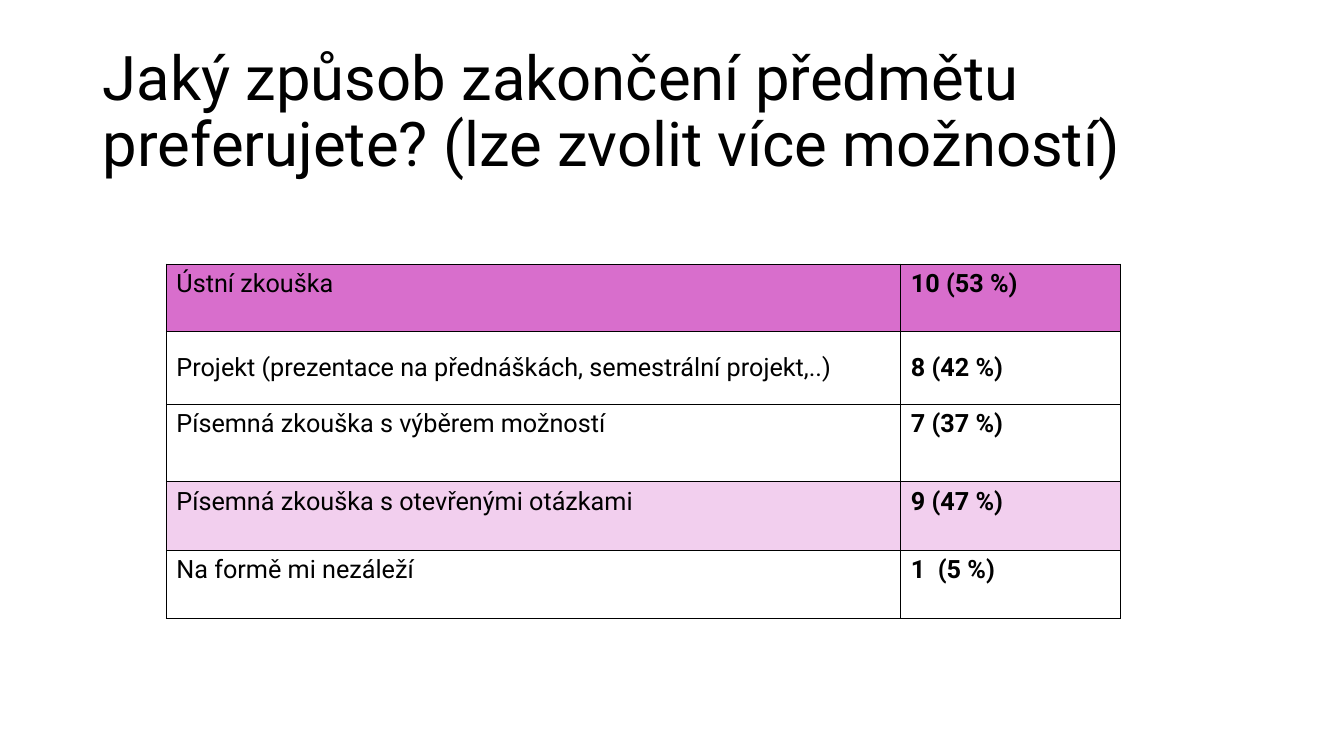
"""Build a survey slide about the preferred way of finishing a course."""
from lxml import etree
from pptx import Presentation
from pptx.dml.color import RGBColor
from pptx.enum.text import MSO_ANCHOR, MSO_AUTO_SIZE, PP_ALIGN
from pptx.oxml.ns import qn
from pptx.util import Inches, Pt

TOP, MIDDLE = MSO_ANCHOR.TOP, MSO_ANCHOR.MIDDLE
LEFT = PP_ALIGN.LEFT
NO_AUTOFIT = MSO_AUTO_SIZE.NONE
TITLE_ONLY = 5

COLORS = {"text": "000000", "border": "000000", "top": "D86ECC",
          "second": "F2CFEE", "plain": "FFFFFF"}
FONT = "Roboto"
TITLE = "Jaký způsob zakončení předmětu preferujete? (lze zvolit více možností)"
TITLE_BOX = [Inches(n) for n in (0.92, 0.4, 11.5, 1.45)]
TABLE_BOX = [Inches(n) for n in (1.65, 2.62, 9.46, 3.53)]
COLUMN_SHARES = (0.77, 0.23)
ANSWERS = [
    ("Ústní zkouška", "10 (53 %)", 0.67, TOP, "top"),
    ("Projekt (prezentace na přednáškách, semestrální projekt,..)",
     "8 (42 %)", 0.72, MIDDLE, "plain"),
    ("Písemná zkouška s výběrem možností", "7 (37 %)", 0.77, TOP, None),
    ("Písemná zkouška s otevřenými otázkami", "9 (47 %)", 0.68, TOP, "second"),
    ("Na formě mi nezáleží", "1  (5 %)", 0.68, TOP, None),
]


def write_text(frame, text, size, bold=False):
    """Write one left-aligned paragraph in the slide's font."""
    paragraph = frame.paragraphs[0]
    paragraph.alignment = LEFT
    run = paragraph.add_run()
    run.text = text
    for name, value in {"name": FONT, "size": Pt(size), "bold": bold}.items():
        setattr(run.font, name, value)
    run.font.color.rgb = RGBColor.from_string(COLORS["text"])
    return paragraph


def add_borders(cell):
    """Draw a thin line on all four sides of a cell."""
    properties = cell._tc.get_or_add_tcPr()
    for side in ("a:lnL", "a:lnR", "a:lnT", "a:lnB"):
        line = etree.SubElement(properties, qn(side), w=str(Pt(1)))
        fill = etree.SubElement(line, qn("a:solidFill"))
        etree.SubElement(fill, qn("a:srgbClr"), val=COLORS["border"])


def fill_cell(cell, text, anchor, color, bold):
    """Format one table cell and write its text."""
    add_borders(cell)
    if color:
        cell.fill.solid()
        cell.fill.fore_color.rgb = RGBColor.from_string(COLORS[color])
    else:
        cell.fill.background()
    cell.vertical_anchor = anchor
    write_text(cell.text_frame, text, 18, bold)


def place_title(slide, box):
    """Place the question in the title placeholder."""
    question = slide.shapes.title
    for name, value in zip(("left", "top", "width", "height"), box):
        setattr(question, name, value)
    frame = question.text_frame
    layout = {"word_wrap": True, "auto_size": NO_AUTOFIT,
              "vertical_anchor": MIDDLE}
    for name, value in layout.items():
        setattr(frame, name, value)
    write_text(frame, TITLE, 44).line_spacing = 0.9


def add_answers(slide, box):
    """Add the table of answers with their counts."""
    answers = slide.shapes.add_table(
        len(ANSWERS), len(COLUMN_SHARES), *box).table
    for name in ("first_row", "horz_banding"):
        setattr(answers, name, False)
    for column, share in zip(answers.columns, COLUMN_SHARES):
        column.width = round(box[2] * share)
    for row, (answer, count, height, anchor, color) in zip(answers.rows, ANSWERS):
        row.height = Inches(height)
        fill_cell(row.cells[0], answer, anchor, color, False)
        fill_cell(row.cells[1], count, anchor, color, True)


def main():
    """Build and save the presentation."""
    presentation = Presentation()
    presentation.slide_width = Inches(13.33)
    presentation.slide_height = Inches(7.5)
    slide = presentation.slides.add_slide(presentation.slide_layouts[TITLE_ONLY])
    place_title(slide, TITLE_BOX)
    add_answers(slide, TABLE_BOX)
    presentation.save("out.pptx")


if __name__ == "__main__":
    main()
